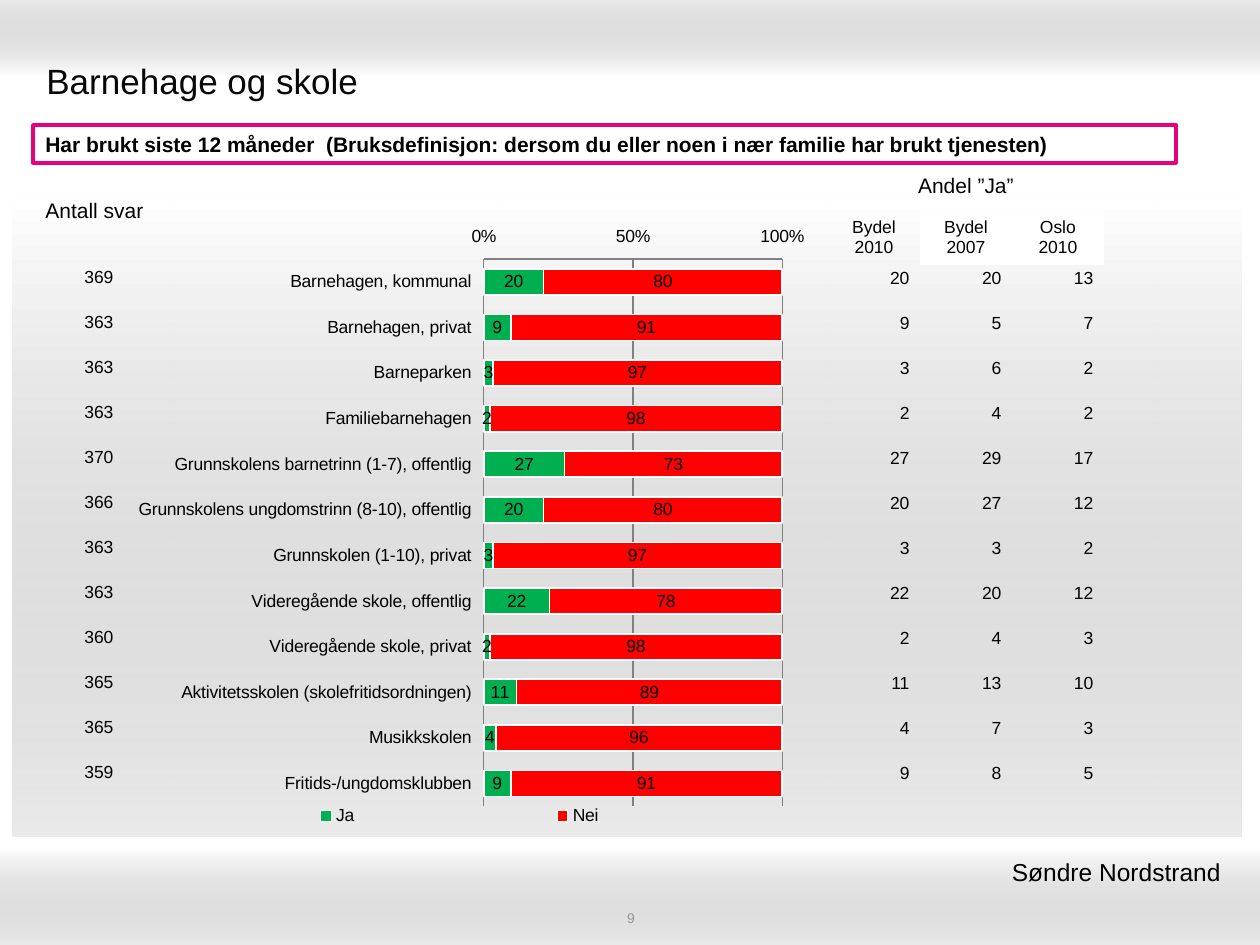
from dataclasses import dataclass

from lxml.etree import SubElement
from pptx import Presentation
from pptx.chart.data import CategoryChartData
from pptx.dml.color import RGBColor
from pptx.enum.chart import XL_CHART_TYPE, XL_LEGEND_POSITION, XL_TICK_LABEL_POSITION, XL_TICK_MARK
from pptx.enum.shapes import MSO_SHAPE
from pptx.enum.text import MSO_ANCHOR, PP_ALIGN
from pptx.oxml import parse_xml
from pptx.oxml.ns import nsdecls, qn
from pptx.util import Emu, Pt

EMU_PER_PX = 914400 / 126
NO_STYLE = "{2D5ABB26-0587-4C30-8999-92F81FD0307C}"
BLACK, WHITE, GREY, PINK = "000000", "FFFFFF", "808080", "E7007E"
ROW_HEIGHT, SHARE_WIDTH = 45, 92


@dataclass
class Area:
    left: int
    top: int
    width: int
    height: int


@dataclass
class Band:
    area: Area
    angle: int


@dataclass
class Label:
    area: Area
    text: str
    size: int
    color: str = BLACK
    align: PP_ALIGN = PP_ALIGN.LEFT
    anchor: MSO_ANCHOR = MSO_ANCHOR.TOP
    bold: bool = False


@dataclass
class Grid:
    left: int
    top: int
    column_width: int
    row_heights: list[int]
    rows: list[list[str]]
    align: PP_ALIGN
    sizes: list[int]
    white_cells: tuple = ()
    merge_first_row: bool = False


@dataclass
class Service:
    name: str
    answers: int
    yes: int
    yes_2007: int
    oslo: int


SERVICES = [
    Service("Barnehagen, kommunal", 369, 20, 20, 13),
    Service("Barnehagen, privat", 363, 9, 5, 7),
    Service("Barneparken", 363, 3, 6, 2),
    Service("Familiebarnehagen", 363, 2, 4, 2),
    Service("Grunnskolens barnetrinn (1-7), offentlig", 370, 27, 29, 17),
    Service("Grunnskolens ungdomstrinn (8-10), offentlig", 366, 20, 27, 12),
    Service("Grunnskolen (1-10), privat", 363, 3, 3, 2),
    Service("Videregående skole, offentlig", 363, 22, 20, 12),
    Service("Videregående skole, privat", 360, 2, 4, 3),
    Service("Aktivitetsskolen (skolefritidsordningen)", 365, 11, 13, 10),
    Service("Musikkskolen", 365, 4, 7, 3),
    Service("Fritids-/ungdomsklubben", 359, 9, 8, 5),
]
SERVICE_HEIGHTS = [ROW_HEIGHT] * len(SERVICES)

BANDS = [
    Band(Area(0, 0, 1260, 78), 270),
    Band(Area(0, 847, 1260, 98), 90),
    Band(Area(13, 197, 1228, 640), 90),
]
TITLE = Label(Area(34, 45, 1191, 70), "Barnehage og skole", 20, "080808", anchor=MSO_ANCHOR.MIDDLE)
PAGE_NUMBER = Label(Area(431, 909, 400, 18), "9", 8, "969696", PP_ALIGN.CENTER, MSO_ANCHOR.MIDDLE)
BANNER = Label(
    Area(33, 125, 1143, 38),
    "Har brukt siste 12 måneder  (Bruksdefinisjon: dersom du eller noen i nær familie har brukt tjenesten)",
    12, bold=True,
)
DISTRICT = Label(Area(769, 851, 471, 43), "Søndre Nordstrand ", 14, align=PP_ALIGN.RIGHT)

SHARES = Grid(
    830, 256, SHARE_WIDTH, SERVICE_HEIGHTS,
    [[str(s.yes), str(s.yes_2007), str(s.oslo)] for s in SERVICES], PP_ALIGN.RIGHT, [10] * len(SERVICES),
)
SHARE_HEADER = Grid(
    828, 163, SHARE_WIDTH, [47, 54], [["Andel ”Ja”", "", ""], ["Bydel\n2010", "Bydel\n2007", "Oslo\n2010"]],
    PP_ALIGN.CENTER, [12, 10], ((1, 1), (1, 2)), True,
)
ANSWER_HEADER = Grid(5, 174, 179, [74], [["Antall svar"]], PP_ALIGN.CENTER, [12])
ANSWERS = Grid(
    37, 255, 89, SERVICE_HEIGHTS, [[str(s.answers)] for s in SERVICES], PP_ALIGN.RIGHT, [10] * len(SERVICES),
)


def px(length: int) -> Emu:
    """Turn pixels into EMU."""
    return Emu(round(length * EMU_PER_PX))


def place(area: Area) -> list[Emu]:
    """Return the four lengths of an area in EMU."""
    return [px(n) for n in (area.left, area.top, area.width, area.height)]


def rgb(color: str) -> RGBColor:
    """Turn a hex string into a colour."""
    return RGBColor.from_string(color)


def set_all(target, values: dict) -> None:
    """Set each attribute in a dict of format values."""
    for name, value in values.items():
        setattr(target, name, value)


def set_font(font, size: int, color: str = BLACK, bold: bool = False) -> None:
    """Give a font its face, size, weight and colour."""
    set_all(font, {"name": "Arial", "size": Pt(size), "bold": bold})
    font.color.rgb = rgb(color)


def set_line(line, color: str, width: float) -> None:
    """Give a line its colour and width."""
    line.color.rgb = rgb(color)
    line.width = Pt(width)


def write(frame, text: str, size: int, align: PP_ALIGN, color: str = BLACK, bold: bool = False) -> None:
    """Fill a text frame, one paragraph to each line."""
    frame.text = text
    for para in frame.paragraphs:
        para.alignment = align
        for span in para.runs:
            set_font(span.font, size, color, bold)


def add_band(page, band: Band) -> None:
    """Draw a band that fades from white to translucent grey."""
    shape = page.shapes.add_shape(MSO_SHAPE.RECTANGLE, *place(band.area))
    shape.shadow.inherit = False
    shape.line.fill.background()
    gradient = parse_xml(
        f'<a:gradFill {nsdecls("a")} rotWithShape="1"><a:gsLst>'
        f'<a:gs pos="0"><a:srgbClr val="{WHITE}"/></a:gs>'
        '<a:gs pos="100000"><a:srgbClr val="999999"><a:alpha val="20000"/></a:srgbClr></a:gs>'
        f'</a:gsLst><a:lin ang="{band.angle * 60000}" scaled="0"/></a:gradFill>'
    )
    shape.element.spPr.find(qn("a:prstGeom")).addnext(gradient)


def add_label(page, label: Label, outline: str = "") -> None:
    """Draw a text box, or an outlined white box when an outline colour is given."""
    if outline:
        box = page.shapes.add_shape(MSO_SHAPE.RECTANGLE, *place(label.area))
        box.shadow.inherit = False
        box.fill.solid()
        box.fill.fore_color.rgb = rgb(WHITE)
        set_line(box.line, outline, 2)
    else:
        box = page.shapes.add_textbox(*place(label.area))
    set_all(box.text_frame, {"word_wrap": True, "vertical_anchor": label.anchor})
    write(box.text_frame, label.text, label.size, label.align, label.color, label.bold)


def add_grid(page, grid: Grid) -> None:
    """Draw a plain table without borders."""
    columns = len(grid.rows[0])
    area = Area(grid.left, grid.top, columns * grid.column_width, sum(grid.row_heights))
    frame = page.shapes.add_table(len(grid.rows), columns, *place(area))
    table = frame.table
    set_all(table, {"first_row": False, "horz_banding": False})
    frame.element.find(".//" + qn("a:tableStyleId")).text = NO_STYLE
    for column in table.columns:
        column.width = px(grid.column_width)
    for r, texts in enumerate(grid.rows):
        table.rows[r].height = px(grid.row_heights[r])
        for c, text in enumerate(texts):
            cell = table.cell(r, c)
            cell.vertical_anchor = MSO_ANCHOR.MIDDLE
            write(cell.text_frame, text, grid.sizes[r], grid.align)
            if (r, c) in grid.white_cells:
                cell.fill.solid()
                cell.fill.fore_color.rgb = rgb(WHITE)
            else:
                cell.fill.background()
    if grid.merge_first_row:
        table.cell(0, 0).merge(table.cell(0, columns - 1))


def set_layout(element, x: float, y: float, w: float, h: float, inner: bool = False) -> None:
    """Place a chart part by fractions of the chart area."""
    for old in element.findall(qn("c:layout")):
        element.remove(old)
    layout = parse_xml(f'<c:layout {nsdecls("c")}/>')
    manual = SubElement(layout, qn("c:manualLayout"))
    values = {"layoutTarget": "inner"} if inner else {}
    values |= {"xMode": "edge", "yMode": "edge", "x": x, "y": y, "w": w, "h": h}
    for name, value in values.items():
        SubElement(manual, qn(f"c:{name}")).set("val", str(value))
    element.insert(0 if inner else 1, layout)


def add_usage_chart(page, area: Area) -> None:
    """Draw the stacked bars of yes and no shares."""
    data = CategoryChartData(number_format="0")
    data.categories = [s.name for s in SERVICES]
    data.add_series("Ja", [s.yes for s in SERVICES])
    data.add_series("Nei", [100 - s.yes for s in SERVICES])
    chart = page.shapes.add_chart(XL_CHART_TYPE.BAR_STACKED, *place(area), data).chart
    set_font(chart.font, 10)
    set_all(chart, {"has_title": False, "has_legend": True})
    set_all(chart.legend, {"position": XL_LEGEND_POSITION.BOTTOM, "include_in_layout": False})
    set_layout(chart.legend._element, 0, 0.91, 0.97, 0.05)

    plot = chart.plots[0]
    set_all(plot, {"gap_width": 75, "overlap": 100, "vary_by_categories": False})
    for series, color in zip(plot.series, ("00B050", "FF0000")):
        series.format.fill.solid()
        series.format.fill.fore_color.rgb = rgb(color)
        set_line(series.format.line, WHITE, 1)
        labels = series.data_labels
        set_all(labels, {"show_value": True, "number_format": "0", "number_format_is_linked": False})
        set_font(labels.font, 10)

    low = {"tick_label_position": XL_TICK_LABEL_POSITION.LOW, "minor_tick_mark": XL_TICK_MARK.NONE}
    names, shares = chart.category_axis, chart.value_axis
    set_all(names, low | {"reverse_order": True, "major_tick_mark": XL_TICK_MARK.NONE})
    set_all(shares, low | {
        "minimum_scale": 0, "maximum_scale": 100, "major_unit": 50,
        "has_major_gridlines": True, "major_tick_mark": XL_TICK_MARK.INSIDE,
    })
    set_all(shares.tick_labels, {"number_format": "General\\%", "number_format_is_linked": False})
    for line in (names.format.line, shares.format.line, shares.major_gridlines.format.line):
        set_line(line, GREY, 0.75)
    plot_area = chart._chartSpace.find(".//" + qn("c:plotArea"))
    set_layout(plot_area, 0.52, 0.07, 0.43, 0.85, inner=True)


def main() -> None:
    """Build the slide and save it."""
    deck = Presentation()
    set_all(deck, {"slide_width": px(1260), "slide_height": px(945)})
    page = deck.slides.add_slide(deck.slide_layouts[6])
    for band in BANDS:
        add_band(page, band)
    add_label(page, TITLE)
    add_label(page, PAGE_NUMBER)
    add_label(page, BANNER, PINK)
    add_usage_chart(page, Area(123, 214, 694, 644))
    for grid in (SHARES, SHARE_HEADER, ANSWER_HEADER):
        add_grid(page, grid)
    add_label(page, DISTRICT)
    add_grid(page, ANSWERS)
    deck.save("out.pptx")


if __name__ == "__main__":
    main()
